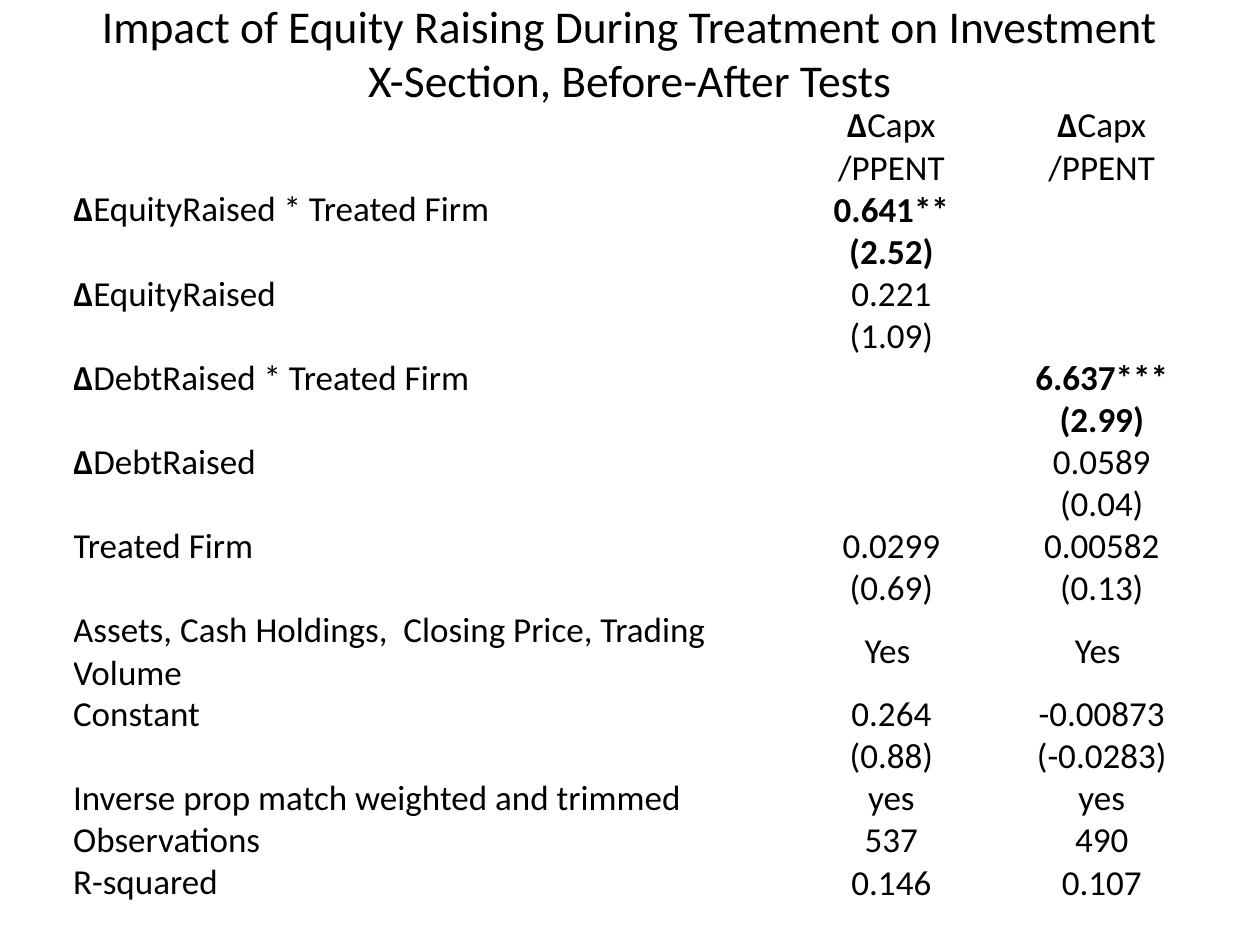
"""Build a slide with a regression table on equity raising and investment."""
from pptx import Presentation
from pptx.dml.color import RGBColor
from pptx.enum.text import MSO_ANCHOR as Anchor, PP_ALIGN as Align
from pptx.util import Inches, Pt


def color(hex_text):
    return RGBColor.from_string(hex_text)


def write(frame, text, size=20, bold=False, align=Align.CENTER,
          anchor=Anchor.MIDDLE, soft_break=False):
    frame.word_wrap = True
    frame.vertical_anchor = anchor
    for number, line in enumerate(text.split("\n")):
        if number == 0:
            para = frame.paragraphs[0]
        elif soft_break:
            para.add_line_break()
        else:
            para = frame.add_paragraph()
        para.alignment = align
        before, delta, after = line.partition("Δ")
        for part, heavy in ((before, bold), (delta, True), (after, bold)):
            if part:
                span = para.add_run()
                span.text = part
                span.font.name = "Calibri"
                span.font.size = Pt(size)
                span.font.bold = heavy
                span.font.color.rgb = color("000000")


deck = Presentation()
deck.slide_width, deck.slide_height = Inches(10), Inches(7.5)
page = deck.slides.add_slide(deck.slide_layouts[6])

title = page.shapes.add_textbox(Inches(0.5), Inches(0), Inches(9), Inches(0.83))
write(title.text_frame,
      "Impact of Equity Raising During Treatment on Investment\n"
      "X-Section, Before-After Tests", size=26, soft_break=True)

header = "ΔCapx\n/PPENT"
results = [
    ("", header, header),
    ("ΔEquityRaised * Treated Firm", "0.641**", ""),
    ("", "(2.52)", ""),
    ("ΔEquityRaised", "0.221", ""),
    ("", "(1.09)", ""),
    ("ΔDebtRaised * Treated Firm", "", "6.637***"),
    ("", "", "(2.99)"),
    ("ΔDebtRaised", "", "0.0589"),
    ("", "", "(0.04)"),
    ("Treated Firm", "0.0299", "0.00582"),
    ("", "(0.69)", "(0.13)"),
    ("Assets, Cash Holdings,  Closing Price, Trading Volume", "Yes ", "Yes "),
    ("Constant", "0.264", "-0.00873"),
    ("", "(0.88)", "(-0.0283)"),
    ("Inverse prop match weighted and trimmed", "yes", "yes"),
    ("Observations", "537", "490"),
    ("R-squared", "0.146", "0.107"),
]
significant = {"0.641**", "(2.52)", "6.637***", "(2.99)"}
two_line_rows = {0, 11}

table = page.shapes.add_table(len(results), 3, Inches(0.58), Inches(0.83),
                              Inches(9), Inches(6.08)).table
table.first_row = table.horz_banding = False
for column, width in zip(table.columns, (5.66, 1.67, 1.67)):
    column.width = Inches(width)

for row, values in enumerate(results):
    table.rows[row].height = Inches(0.64 if row in two_line_rows else 0.32)
    for column, value in enumerate(values):
        cell = table.cell(row, column)
        cell.fill.background()
        cell.margin_left = cell.margin_right = Inches(0)
        cell.margin_top = cell.margin_bottom = Inches(0)
        is_label = column == 0
        cell.vertical_anchor = Anchor.BOTTOM if is_label else Anchor.MIDDLE
        write(cell.text_frame, value, bold=value in significant,
              align=Align.LEFT if is_label else Align.CENTER,
              anchor=cell.vertical_anchor)
        if not value:
            cell.text_frame.paragraphs[0].font.size = Pt(18)

deck.save("out.pptx")
